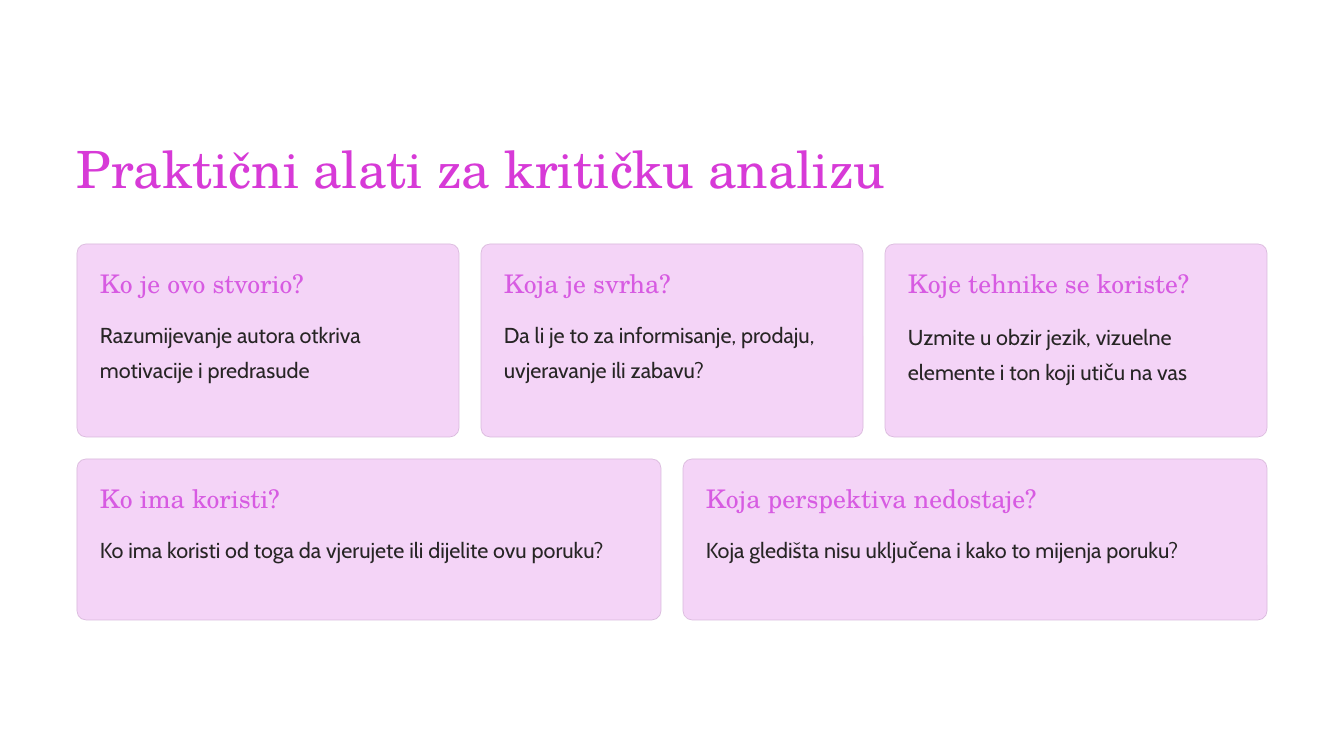
from dataclasses import dataclass

from pptx import Presentation
from pptx.dml.color import RGBColor
from pptx.enum.shapes import MSO_SHAPE
from pptx.enum.text import MSO_ANCHOR, MSO_AUTO_SIZE, PP_ALIGN
from pptx.util import Emu, Pt

# Content: rows of (height px, cards); a card is (question, answer, extra answer drop px)
TITLE = "Praktični alati za kritičku analizu"
ROWS = [
    (193, [
        ("Ko je ovo stvorio?", "Razumijevanje autora otkriva motivacije i predrasude", 0),
        ("Koja je svrha?", "Da li je to za informisanje, prodaju, uvjeravanje ili zabavu?", 0),
        ("Koje tehnike se koriste?",
         "Uzmite u obzir jezik, vizuelne elemente i ton koji utiču na vas", 2),
    ]),
    (161, [
        ("Ko ima koristi?", "Ko ima koristi od toga da vjerujete ili dijelite ovu poruku?", 0),
        ("Koja perspektiva nedostaje?",
         "Koja gledišta nisu uključena i kako to mijenja poruku?", 0),
    ]),
]


@dataclass(frozen=True)
class Theme:
    serif: str = "TeX Gyre Schola"
    sans: str = "Cabin"
    title: str = "D73AD7"
    question: str = "D75BE2"
    answer: str = "272525"
    card: str = "F4D4F7"
    border: str = "DABADD"
    title_size: float = 44
    question_size: float = 22
    answer_size: float = 18.5
    border_width: float = 0.6


T = Theme()

# Layout in px
SLIDE_W, SLIDE_H = 1344, 756
LEFT, TOP, WIDTH = 77, 244, 1190
GAP, PAD, RADIUS = 22, 23, 9
ANSWER_DY = 69


def px(n):
    return Emu(round(n * 914400 / 84))


def place(sp, x, y, w, h):
    sp.left, sp.top, sp.width, sp.height = px(x), px(y), px(w), px(h)


def write(sp, text, *, font, size, color, leading):
    tf = sp.text_frame
    tf.word_wrap = True
    tf.auto_size = MSO_AUTO_SIZE.NONE
    tf.vertical_anchor = MSO_ANCHOR.TOP
    tf.margin_left = tf.margin_right = tf.margin_top = tf.margin_bottom = 0
    p = tf.paragraphs[0]
    p.alignment = PP_ALIGN.LEFT
    p.line_spacing = Pt(leading)
    p.space_before = Pt(0)
    r = p.add_run()
    r.text = text
    r.font.name, r.font.size = font, Pt(size)
    r.font.color.rgb = RGBColor.from_string(color)


def add_card(s, x, y, w, h, question, answer, drop):
    sp = s.shapes.add_shape(MSO_SHAPE.ROUNDED_RECTANGLE, px(x), px(y), px(w), px(h))
    sp.adjustments[0] = RADIUS / h
    sp.shadow.inherit = False
    sp.fill.solid()
    sp.fill.fore_color.rgb = RGBColor.from_string(T.card)
    sp.line.color.rgb = RGBColor.from_string(T.border)
    sp.line.width = Pt(T.border_width)

    inner = w - 2 * PAD
    box = s.shapes.add_textbox(px(x + PAD), px(y + PAD), px(inner), px(32))
    write(box, question, font=T.serif, size=T.question_size, color=T.question, leading=27.5)
    box = s.shapes.add_textbox(px(x + PAD), px(y + ANSWER_DY + drop), px(inner), px(70))
    write(box, answer, font=T.sans, size=T.answer_size, color=T.answer, leading=30)


def main():
    prs = Presentation()
    prs.slide_width, prs.slide_height = px(SLIDE_W), px(SLIDE_H)
    s = prs.slides.add_slide(prs.slide_layouts[5])

    # Title
    place(s.shapes.title, LEFT, 135, 874, 65)
    write(s.shapes.title, TITLE, font=T.serif, size=T.title_size, color=T.title, leading=55)

    # Cards: each row shares the full width equally
    y = TOP
    for h, cards in ROWS:
        w = (WIDTH - GAP * (len(cards) - 1)) / len(cards)
        for i, card in enumerate(cards):
            add_card(s, LEFT + i * (w + GAP), y, w, h, *card)
        y += h + GAP

    prs.save("out.pptx")


if __name__ == "__main__":
    main()
